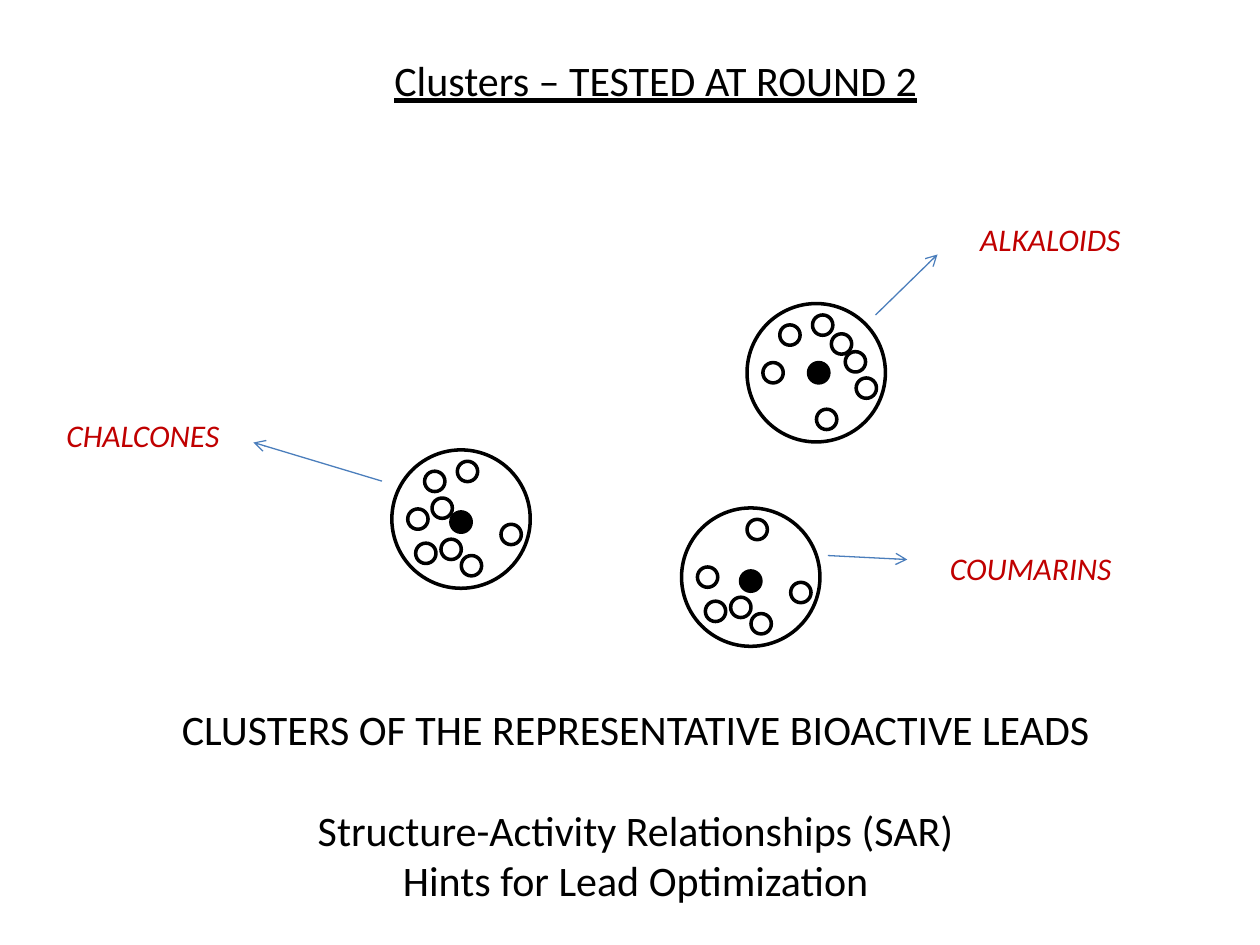
from pptx import Presentation
from pptx.dml.color import RGBColor
from pptx.enum.shapes import MSO_CONNECTOR, MSO_SHAPE
from pptx.enum.text import MSO_AUTO_SIZE, PP_ALIGN
from pptx.oxml.ns import qn
from pptx.util import Cm, Pt
from lxml import etree

OVAL = MSO_SHAPE.OVAL
STRAIGHT = MSO_CONNECTOR.STRAIGHT
FIT_SHAPE = MSO_AUTO_SIZE.SHAPE_TO_FIT_TEXT
LEFT, CENTER = PP_ALIGN.LEFT, PP_ALIGN.CENTER
color = RGBColor.from_string

CLUSTER_SIZE, MEMBER_SIZE = 2.79, 0.41

# Member positions inside a cluster circle, in cm from its top left
TOP, UPPER_LEFT, INNER = (1.32, 0.23), (0.66, 0.43), (0.81, 0.97)
SIDE_LEFT, SIDE_RIGHT = (0.32, 1.19), (2.2, 1.5)
LOWER_LEFT, LOWER, BOTTOM = (0.48, 1.88), (0.99, 1.8), (1.4, 2.13)
UPPER_RIGHT, RIGHT = (1.7, 0.61), (1.98, 0.97)

# Name, label box (left, top, width), circle corner, arrow start and end,
# lead position, member positions
clusters = [
    ("CHALCONES", (1.09, 8.26, 3.66), (7.9, 9.07), (7.7, 9.7), (5.11, 8.92),
     (1.19, 1.25),
     [LOWER_LEFT, BOTTOM, INNER, SIDE_RIGHT, UPPER_LEFT, SIDE_LEFT, LOWER, TOP]),
    ("ALKALOIDS", (19.51, 4.32, 3.38), (15.06, 6.12), (17.65, 6.35), (18.9, 5.13),
     (1.24, 1.19),
     [UPPER_RIGHT, BOTTOM, RIGHT, SIDE_RIGHT, UPPER_LEFT, SIDE_LEFT, TOP]),
    ("COUMARINS", (18.9, 10.95, 3.81), (13.74, 10.24), (16.69, 11.2), (18.29, 11.28),
     (1.19, 1.27),
     [LOWER_LEFT, BOTTOM, SIDE_RIGHT, SIDE_LEFT, LOWER, TOP]),
]

presentation = Presentation()
presentation.slide_width, presentation.slide_height = Cm(25.4), Cm(19.05)
slide = presentation.slides.add_slide(presentation.slide_layouts[6])


def add_circle(left, top, size, fill):
    shape = slide.shapes.add_shape(OVAL, Cm(left), Cm(top), Cm(size), Cm(size))
    shape.shadow.inherit = False
    shape.fill.solid()
    shape.fill.fore_color.rgb = color(fill)
    shape.line.color.rgb = color("000000")
    shape.line.width = Pt(2)


def add_text(left, top, width, height, text, size, text_color, alignment=LEFT):
    box = slide.shapes.add_textbox(Cm(left), Cm(top), Cm(width), Cm(height))
    text_frame = box.text_frame
    text_frame.text = text
    text_frame.word_wrap = False
    text_frame.auto_size = FIT_SHAPE
    for paragraph in text_frame.paragraphs:
        paragraph.alignment = alignment
        for run in paragraph.runs:
            run.font.name = "Calibri"
            run.font.size = Pt(size)
            run.font.color.rgb = color(text_color)
    return text_frame.paragraphs


# Title
title = add_text(7.7, 0.97, 11.15, 1.27, "Clusters – TESTED AT ROUND 2", 24, "000000")
title[0].runs[0].font.underline = True

# Clusters with members, lead, arrow and label
for name, (label_left, label_top, label_width), (left, top), start, end, lead, members in clusters:
    add_circle(left, top, CLUSTER_SIZE, "FFFFFF")
    for x, y in members:
        add_circle(left + x, top + y, MEMBER_SIZE, "FFFFFF")
    add_circle(left + lead[0], top + lead[1], MEMBER_SIZE, "000000")

    arrow = slide.shapes.add_connector(STRAIGHT, *[Cm(value) for value in start + end])
    arrow.line.color.rgb = color("4B7EBC")
    arrow.line.width = Pt(0.75)
    etree.SubElement(arrow.line._get_or_add_ln(), qn("a:tailEnd"), type="arrow")
    etree.SubElement(arrow._element.spPr, qn("a:effectLst"))

    label = add_text(label_left, label_top, label_width, 1.02, name, 18, "C00000")
    label[0].runs[0].font.italic = True

# Conclusion
conclusion = add_text(
    3.33, 14.05, 18.97, 4.37,
    "CLUSTERS OF THE REPRESENTATIVE BIOACTIVE LEADS\n"
    "Structure-Activity Relationships (SAR)\n"
    "Hints for Lead Optimization",
    24, "000000", CENTER)
conclusion[1].space_before = Pt(29)

presentation.save("out.pptx")
